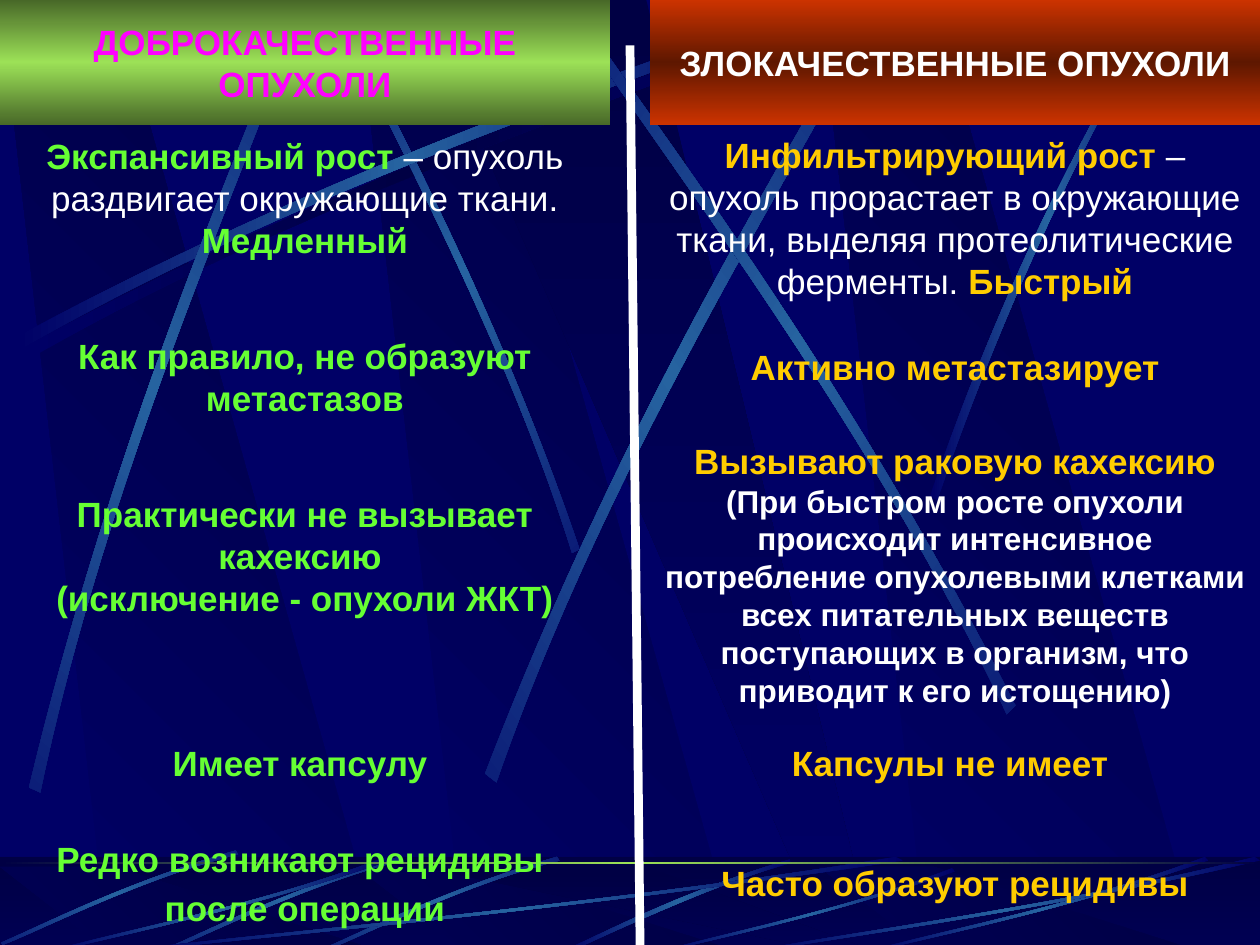
from math import cos, radians, sin

from lxml import etree
from pptx import Presentation
from pptx.dml.color import RGBColor
from pptx.enum.shapes import MSO_CONNECTOR, MSO_SHAPE
from pptx.enum.text import MSO_ANCHOR, PP_ALIGN
from pptx.oxml.ns import qn
from pptx.util import Cm, Pt

RECTANGLE = MSO_SHAPE.RECTANGLE
STRAIGHT = MSO_CONNECTOR.STRAIGHT
MIDDLE = MSO_ANCHOR.MIDDLE
CENTER = PP_ALIGN.CENTER

NAVY = RGBColor(0x00, 0x00, 0x66)
DARK_NAVY = RGBColor(0x00, 0x00, 0x44)
STEEL = RGBColor(0x26, 0x63, 0xA0)
LIME = RGBColor(0x9C, 0xE1, 0x57)
RUST = RGBColor(0xCC, 0x33, 0x00)
MAGENTA = RGBColor(0xFF, 0x00, 0xFF)
WHITE = RGBColor(0xFF, 0xFF, 0xFF)
GREEN = RGBColor(0x66, 0xFF, 0x33)
GOLD = RGBColor(0xFF, 0xCC, 0x00)

SHADE = 46275  # thousandths of a percent
GLOW = [(NAVY, None), (STEEL, None), (NAVY, None)]
FALL = [(NAVY, None), (DARK_NAVY, None)]
RISE = FALL[::-1]

COLUMN_WIDTH, ROW_HEIGHT = 4.84, 0.99
RIGHT_COLUMN = 5.16

# A ray is two cubic curves: start, two controls, end; then the way back.
SKY_RAYS = [
    (45, [(4.6, 4.36), (3.91, 2.34), (3.02, 0.77), (2.69, 0.05),
          (2.65, 0.07), (2.95, 0.79), (3.98, 2.58), (4.54, 4.39)]),
    (0, [(0.14, 2.67), (2.78, 1.25), (5.18, 0.51), (6.2, 0.1),
         (6.23, 0.16), (5.22, 0.61), (2.48, 1.43), (0.17, 2.77)]),
    (311.7, [(0.23, 6.25), (0.93, 3.34), (1.97, 1.05), (2.35, 0.02),
             (2.41, 0.04), (2.07, 1.09), (0.86, 3.68), (0.32, 6.29)]),
    (321.6, [(3.85, 6.14), (4.98, 3.2), (6.38, 1.02), (6.92, 0.01),
             (6.98, 0.04), (6.49, 1.08), (4.86, 3.55), (3.94, 6.21)]),
    (34.7, [(8.06, 5.6), (6.7, 2.93), (5.16, 0.95), (4.55, 0.04),
            (4.49, 0.07), (5.07, 1.01), (6.85, 3.25), (7.99, 5.67)]),
    (0, [(7.38, 3.94), (8.14, 1.73), (8.88, 0.66), (9.17, 0),
         (9.27, 0), (8.36, 1.45), (7.69, 3.22), (7.44, 3.97)]),
]
SHADOW_RAY = [(x + 0.06, y + 0.08) for x, y in SKY_RAYS[1][1]]
FLOOR_ARC = [(6.27, 6.82), (5.37, 7.09), (4.77, 7.42), (4.48, 7.54),
             (4.53, 7.55), (4.9, 7.38), (5.71, 7), (6.28, 6.85)]
TILTED_ARC = [(4.42, 6.8), (3.55, 7.05), (2.87, 7.4), (2.56, 7.53),
              (2.57, 7.55), (2.88, 7.43), (3.65, 7.03), (4.44, 6.83)]
TILTED_SHIFTS = [(0, 0), (-1.25, 0), (-2.55, -0.05)]
# The sweep is given in fractions of its box.
SWEEP = [(1, 0.04), (0.57, 0.57), (0.17, 0.85), (0.01, 1),
         (0, 0.99), (0.17, 0.81), (0.62, 0.51), (0.99, 0)]
SWEEP_BOXES = [(1, 6.8, 6.17, 0.75), (0.42, 6.8, 2.67, 0.75),
               (5.27, 6.89, 2.31, 0.66), (6.92, 6.8, 2.67, 0.75),
               (6, 6.8, 4, 0.75)]

LEFT_ROWS = [
    (1.07, [[("Экспансивный рост", {}),
             (" – опухоль раздвигает окружающие ткани. ", {"color": WHITE, "bold": False}),
             ("Медленный", {})]], 0),
    (2.49, [[("Как правило, не образуют метастазов", {})]], 0),
    (3.91, [[("Практически не вызывает кахексию ", {})],
            [("(исключение - опухоли ЖКТ)", {})]], 0),
    (5.56, [[("Имеет капсулу ", {})]], 0),
    (6.51, [[("Редко возникают рецидивы ", {})], [("после операции", {})]], 4),
]
RIGHT_ROWS = [
    (1.23, [[("Инфильтрирующий рост", {}),
             (" – опухоль прорастает в окружающие ткани, выделяя протеолитические ферменты. ",
              {"color": WHITE, "bold": False}),
             ("Быстрый", {})]], 0),
    (2.41, [[("Активно метастазирует", {})]], 0),
    (4.06, [[("Вызывают раковую кахексию", {})],
            [("(При быстром росте опухоли происходит интенсивное потребление опухолевыми "
              "клетками всех питательных веществ поступающих в организм, что приводит "
              "к его истощению)", {"color": WHITE, "size": 18})]], 0),
    (5.56, [[("Капсулы не имеет ", {})]], 0),
    (6.51, [[("Часто образуют рецидивы", {})]], 0),
]


def length(units):
    """Turn a grid unit of 2.54 cm into a length."""
    return Cm(units * 2.54)


def add_color(parent, color, shade=None, opacity=None):
    node = etree.SubElement(parent, qn("a:srgbClr"), val=str(color))
    if shade:
        etree.SubElement(node, qn("a:gamma"))
        etree.SubElement(node, qn("a:shade"), val=str(shade))
        etree.SubElement(node, qn("a:invGamma"))
    if opacity:
        etree.SubElement(node, qn("a:alpha"), val=str(opacity))


def finish(shape, stops, angle=0, opacity=None):
    """Fill with evenly spaced (colour, shade) stops, or one see-through colour."""
    shape.fill.background()
    if opacity:
        fill = etree.Element(qn("a:solidFill"))
        add_color(fill, stops[0][0], opacity=opacity)
    else:
        fill = etree.Element(qn("a:gradFill"), rotWithShape="1")
        stop_list = etree.SubElement(fill, qn("a:gsLst"))
        for index, (color, shade) in enumerate(stops):
            position = 100000 * index // (len(stops) - 1)
            stop = etree.SubElement(stop_list, qn("a:gs"), pos=str(position))
            add_color(stop, color, shade)
        etree.SubElement(fill, qn("a:lin"), ang=str(angle * 60000), scaled="1")
    properties = shape._element.spPr
    properties.replace(properties.find(qn("a:noFill")), fill)
    shape.line.fill.background()
    shape.shadow.inherit = False


def add_block(shapes, box, stops, **look):
    shape = shapes.add_shape(RECTANGLE, *map(length, box))
    finish(shape, stops, **look)
    return shape


def rotate(point, degrees):
    x, y = point
    turn = radians(degrees)
    return x * cos(turn) - y * sin(turn), x * sin(turn) + y * cos(turn)


def add_outline(shapes, points, stops, angle=0, rotation=0):
    """Draw a closed outline whose gradient turns with its rotation."""
    level = [rotate(point, -rotation) for point in points]
    corners = [(length(x), length(y)) for x, y in level]
    builder = shapes.build_freeform(*corners[0])
    builder.add_line_segments(corners[1:], close=True)
    shape = builder.convert_to_shape()
    middle = [(min(values) + max(values)) / 2 for values in zip(*level)]
    x, y = rotate(middle, rotation)
    shape.left = length(x) - shape.width // 2
    shape.top = length(y) - shape.height // 2
    shape.rotation = rotation
    finish(shape, stops, angle)
    return shape


def add_ray(shapes, nodes, stops=GLOW, rotation=0):
    """Draw an outline and bend its two long sides into cubic curves."""
    ray = add_outline(shapes, nodes, stops, rotation=rotation)
    lines = list(ray._element.iter(qn("a:lnTo")))
    for side in (lines[:3], lines[4:7]):
        bend = etree.Element(qn("a:cubicBezTo"))
        side[0].addprevious(bend)
        for line in side:
            bend.append(line[0])
            line.getparent().remove(line)


def add_panels(shapes, top, height):
    """Draw three slanted panels and a wedge in a band of the page."""
    bottom = top + height
    for left in (2.83, 0, 6.5):
        add_outline(shapes, [(left + 0.86, bottom), (left + 3.02, bottom),
                             (left + 0.91, top), (left, top)], FALL, angle=315)
    add_outline(shapes, [(3.33, top), (6.58, bottom), (6.94, bottom), (5.13, top)],
                RISE, angle=90)


def draw_sky(shapes):
    add_panels(shapes, 0, 7.52)
    add_ray(shapes, SHADOW_RAY, [(NAVY, None), (DARK_NAVY, None), (NAVY, None)])
    for rotation, nodes in SKY_RAYS:
        add_ray(shapes, nodes, rotation=rotation)


def draw_floor(shapes, box):
    left, top, width, height = box
    add_block(shapes, box, RISE, angle=90)
    add_panels(shapes, top + 0.08, height - 0.08)
    add_block(shapes, box, RISE, opacity=50000)
    add_ray(shapes, FLOOR_ARC)
    for across, down in TILTED_SHIFTS:
        add_ray(shapes, [(x + across, y + down) for x, y in TILTED_ARC], rotation=315)
    for x, y, wide, high in SWEEP_BOXES:
        add_ray(shapes, [(x + wide * u, y + high * v) for u, v in SWEEP])
    add_block(shapes, (left, top + 0.04, width, 0.02),
              [(DARK_NAVY, None), (LIME, None), (DARK_NAVY, None)])


def draw_backdrop(page, master):
    """Draw the art as one group and move it behind all else on the master."""
    master.background.fill.solid()
    master.background.fill.fore_color.rgb = NAVY
    art = page.shapes.add_group_shape()
    draw_sky(art.shapes)
    draw_floor(art.shapes, (0, 6.8, 10, 0.75))
    master.shapes._spTree.insert(2, art._element)


def write(shape, paragraphs, color, size=20, bold=True, gap=0):
    """Write paragraphs of (text, changes) spans, centred in the shape."""
    frame = shape.text_frame
    frame.word_wrap = True
    frame.vertical_anchor = MIDDLE
    for index, spans in enumerate(paragraphs):
        para = frame.add_paragraph() if index else frame.paragraphs[0]
        para.alignment = CENTER
        if index:
            para.space_before = Pt(gap)
        for text, changes in spans:
            span = para.add_run()
            span.text = text
            span.font.name = "Arial"
            span.font.size = Pt(changes.get("size", size))
            span.font.bold = changes.get("bold", bold)
            span.font.color.rgb = changes.get("color", color)


def draw_column(page, left, heading, heading_color, stops, rows, color):
    header = add_block(page.shapes, (left, 0, COLUMN_WIDTH, ROW_HEIGHT), stops, angle=90)
    write(header, [[(heading, {})]], heading_color)
    for top, paragraphs, gap in rows:
        box = page.shapes.add_textbox(*map(length, (left, top, COLUMN_WIDTH, ROW_HEIGHT)))
        write(box, paragraphs, color, gap=gap)


def draw_divider(page):
    divider = page.shapes.add_connector(STRAIGHT, *map(length, (5, 0.36, 5.08, 7.5)))
    divider.line.color.rgb = WHITE
    divider.line.width = Pt(5)
    etree.SubElement(divider._element.spPr, qn("a:effectLst"))


def main():
    deck = Presentation()
    deck.slide_width, deck.slide_height = Cm(25.4), Cm(19.05)
    page = deck.slides.add_slide(deck.slide_layouts[6])
    draw_backdrop(page, deck.slide_master)
    draw_column(page, 0, "ДОБРОКАЧЕСТВЕННЫЕ ОПУХОЛИ", MAGENTA,
                [(LIME, SHADE), (LIME, None), (LIME, SHADE)], LEFT_ROWS, GREEN)
    draw_column(page, RIGHT_COLUMN, "ЗЛОКАЧЕСТВЕННЫЕ ОПУХОЛИ", WHITE,
                [(RUST, None), (RUST, SHADE), (RUST, None)], RIGHT_ROWS, GOLD)
    draw_divider(page)
    deck.save("out.pptx")


if __name__ == "__main__":
    main()
